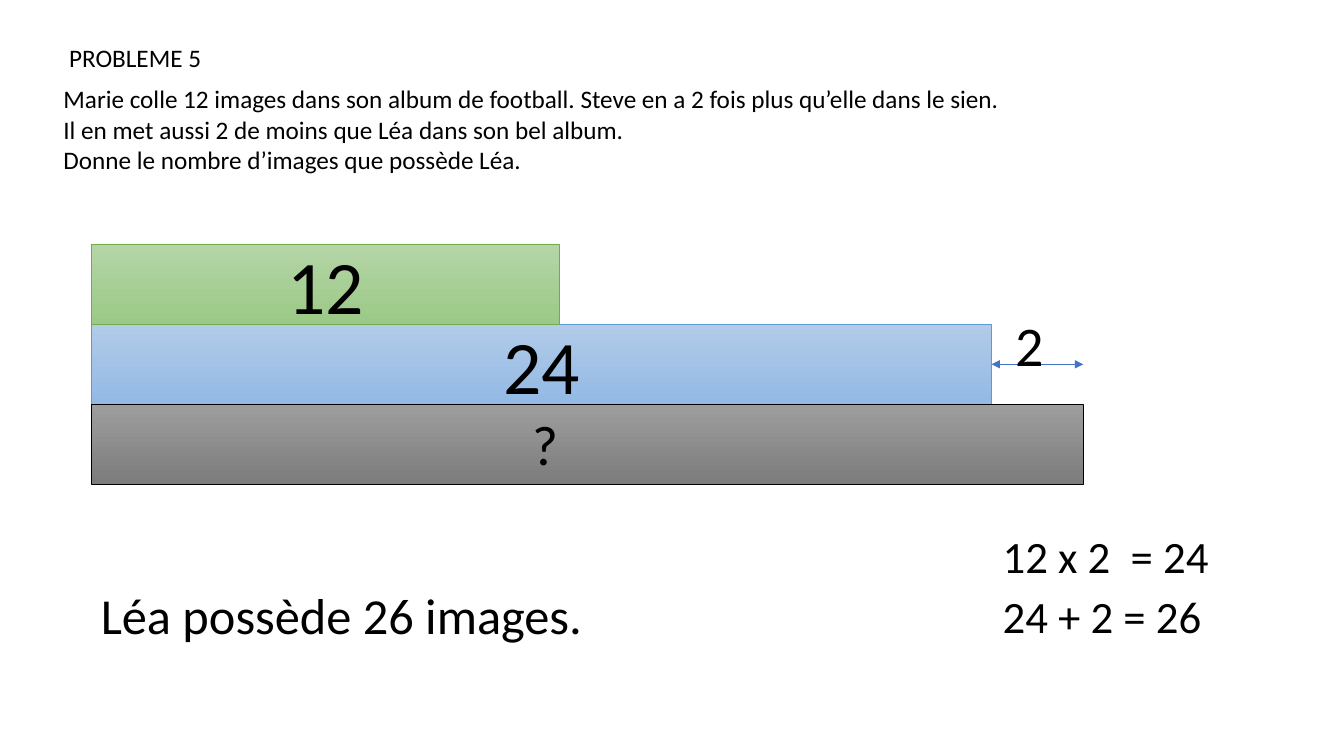
"""Build the bar-model slide that solves problem 5."""
from dataclasses import dataclass

from lxml import etree
from pptx import Presentation
from pptx.dml.color import RGBColor
from pptx.enum import shapes, text
from pptx.oxml import ns
from pptx.util import Cm, Pt


@dataclass(frozen=True)
class Theme:
    font: str = "Calibri"
    ink: str = "000000"
    arrow: str = "4472C4"
    blue: tuple[str, str, str] = ("B1CBE9", "93B9E4", "5B9BD5")
    green: tuple[str, str, str] = ("B5D5A7", "9CC987", "70AD47")
    grey: tuple[str, str, str] = ("9D9D9D", "7C7C7C", "000000")
    line: float = 0.5
    body: int = 18
    sums: int = 32
    answer: int = 36
    label: int = 40
    bar: int = 54


@dataclass(frozen=True)
class Bar:
    row: int
    width: float
    colours: tuple[str, str, str]
    value: str = ""


@dataclass(frozen=True)
class Caption:
    left: float
    top: float
    width: float
    height: float
    size: int
    paragraphs: tuple[str, ...]
    space_after: int = 0


THEME = Theme()
BAR_LEFT, BAR_TOP, BAR_HEIGHT = 2.31, 6.15, 2.02
STEVE_WIDTH, LEA_WIDTH = 22.68, 24.99

STEVE = Bar(1, STEVE_WIDTH, THEME.blue, "24")
MARIE = Bar(0, 11.79, THEME.green, "12")
LEA = Bar(2, LEA_WIDTH, THEME.grey)

CAPTIONS = (
    Caption(1.35, 0.94, 26.21, 4.6, THEME.body, (
        "\u00a0PROBLEME 5".replace("\u00a0", " "),
        "Marie colle 12 images dans son album de football. Steve en a 2 fois plus qu’elle dans le sien. \v"
        "Il en met aussi 2 de moins que Léa dans son bel album. \v"
        "Donne le nombre d’images que possède Léa.",
    ), space_after=8),
    Caption(25.02, 7.7, 2.54, 1.96, THEME.label, (" 2",)),
    Caption(13.18, 10.19, 2.54, 1.96, THEME.label, ("?",)),
    Caption(25.02, 13.21, 6.83, 1.63, THEME.sums, ("12 x 2  = 24",)),
    Caption(2.29, 14.6, 19.15, 1.8, THEME.answer, ("Léa possède 26 images.",)),
    Caption(25.02, 14.71, 8.08, 1.63, THEME.sums, ("24 + 2 = 26",)),
)


def write(frame, *paragraphs: str, size: int, align=text.PP_ALIGN.LEFT,
          anchor=text.MSO_ANCHOR.TOP, space_after: int = 0) -> None:
    """Fill a text frame with uniformly formatted paragraphs."""
    frame.word_wrap = True
    frame.vertical_anchor = anchor
    for index, wording in enumerate(paragraphs):
        paragraph = frame.add_paragraph() if index else frame.paragraphs[0]
        paragraph.text = wording
        paragraph.alignment = align
        paragraph.space_after = Pt(space_after)
        for run in paragraph.runs:
            run.font.name = THEME.font
            run.font.size = Pt(size)
            run.font.color.rgb = RGBColor.from_string(THEME.ink)


def draw_bar(slide, bar: Bar):
    """Draw one gradient bar of the model and return it."""
    rectangle = slide.shapes.add_shape(
        shapes.MSO_SHAPE.RECTANGLE, Cm(BAR_LEFT), Cm(BAR_TOP + bar.row * BAR_HEIGHT),
        Cm(bar.width), Cm(BAR_HEIGHT))
    rectangle.shadow.inherit = False
    rectangle.fill.gradient()
    rectangle.fill.gradient_angle = 270
    upper, lower, outline = bar.colours
    for stop, colour in zip(rectangle.fill.gradient_stops, (upper, lower)):
        stop.color.rgb = RGBColor.from_string(colour)
    rectangle.line.color.rgb = RGBColor.from_string(outline)
    rectangle.line.width = Pt(THEME.line)
    if bar.value:
        write(rectangle.text_frame, bar.value, size=THEME.bar,
              align=text.PP_ALIGN.CENTER, anchor=text.MSO_ANCHOR.MIDDLE)
    return rectangle


def draw_difference(slide, steve) -> None:
    """Draw the two-headed arrow from Steve's bar to the end of Léa's."""
    middle = steve.top + steve.height // 2
    arrow = slide.shapes.add_connector(
        shapes.MSO_CONNECTOR.STRAIGHT, steve.left + steve.width, middle,
        Cm(BAR_LEFT + LEA_WIDTH), middle)
    arrow.begin_connect(steve, 3)
    arrow.line.color.rgb = RGBColor.from_string(THEME.arrow)
    arrow.line.width = Pt(THEME.line)
    outline = arrow.line._get_or_add_ln()
    for end in ("a:headEnd", "a:tailEnd"):
        etree.SubElement(outline, ns.qn(end), type="triangle")
    etree.SubElement(arrow._element.spPr, ns.qn("a:effectLst"))


def draw_caption(slide, caption: Caption) -> None:
    """Place one text box on the slide."""
    box = slide.shapes.add_textbox(
        Cm(caption.left), Cm(caption.top), Cm(caption.width), Cm(caption.height))
    write(box.text_frame, *caption.paragraphs, size=caption.size,
          space_after=caption.space_after)


def main() -> None:
    """Assemble and save the slide."""
    deck = Presentation()
    deck.slide_width, deck.slide_height = Cm(33.87), Cm(19.05)
    slide = deck.slides.add_slide(deck.slide_layouts[6])
    steve = draw_bar(slide, STEVE)
    for bar in (MARIE, LEA):
        draw_bar(slide, bar)
    draw_difference(slide, steve)
    for caption in CAPTIONS:
        draw_caption(slide, caption)
    deck.save("out.pptx")


if __name__ == "__main__":
    main()
